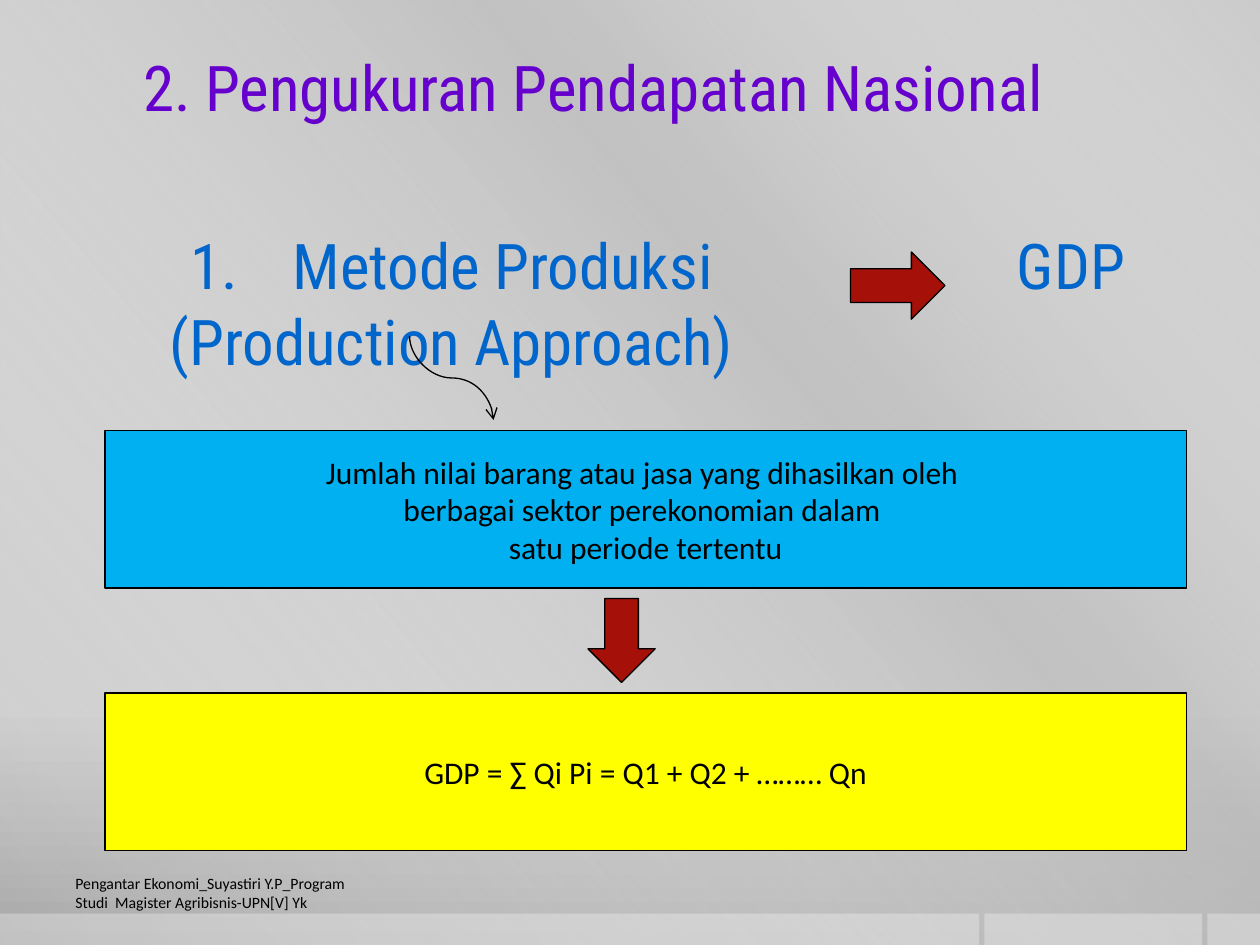
from lxml import etree
from pptx import Presentation
from pptx import util as u
from pptx.dml.color import RGBColor
from pptx.enum import shapes, text
from pptx.oxml import ns

COLORS = {
    "black": "000000", "white": "FFFFFF", "purple": "6600CC", "blue": "0066CC",
    "sky": "00B0F0", "yellow": "FFFF00", "red": "A51009",
    "pale": "CBCBCB", "light": "C8C8C8", "grey": "A7A7A7", "silver": "BFBFBF",
}
HEADING, BODY = "Roboto Condensed", "Calibri"


def add_xml(parent, tag, **attributes):
    return etree.SubElement(parent, ns.qn(tag), attributes)


class SlideBuilder:
    """Holds the style and the current slide, and adds each kind of element."""

    def __init__(self, presentation, layout_index):
        self.slide = presentation.slides.add_slide(presentation.slide_layouts[layout_index])

    def color(self, name):
        return RGBColor.from_string(COLORS[name])

    def place(self, shape, box):
        shape.left, shape.top, shape.width, shape.height = map(u.Pt, box)

    def gradient(self, fill, parent, stops, angle):
        fill.gradient()
        gradient = parent.find(".//" + ns.qn("a:gradFill"))
        for child in list(gradient):
            gradient.remove(child)
        stop_list = add_xml(gradient, "a:gsLst")
        for position, name, opacity in stops:
            stop = add_xml(stop_list, "a:gs", pos=str(position * 1000))
            self.opacity(add_xml(stop, "a:srgbClr", val=COLORS[name]), opacity)
        add_xml(gradient, "a:lin", ang=str(angle * 60000), scaled="0")

    def opacity(self, color_element, percent):
        if percent < 100:
            add_xml(color_element, "a:alpha", val=str(percent * 1000))

    def background(self, stops, angle):
        self.gradient(self.slide.background.fill, self.slide.element, stops, angle)

    def overlay(self, box, stops, angle):
        shape = self.shape("RECTANGLE", box)
        self.gradient(shape.fill, shape.element.spPr, stops, angle)

    def shape(self, kind, box, fill=None, line=None, opacity=100):
        shape = self.slide.shapes.add_shape(shapes.MSO_SHAPE[kind], *map(u.Pt, box))
        shape.shadow.inherit = False
        if fill:
            shape.fill.solid()
            shape.fill.fore_color.rgb = self.color(fill)
            self.opacity(shape.element.spPr.find(".//" + ns.qn("a:srgbClr")), opacity)
        if line:
            shape.line.color.rgb = self.color(line)
            shape.line.width = u.Pt(0.75)
        else:
            shape.line.fill.background()
        return shape

    def add_lines(self, shape, lines, size, font, color, anchor="TOP", align="CENTER",
                  wrap=False, numbered_indent=None):
        frame = shape.text_frame
        frame.word_wrap = wrap
        frame.auto_size = text.MSO_AUTO_SIZE.NONE
        frame.vertical_anchor = text.MSO_ANCHOR[anchor]
        for index, line in enumerate(lines):
            paragraph = frame.add_paragraph() if index else frame.paragraphs[0]
            paragraph.alignment = text.PP_ALIGN[align]
            paragraph.space_before = u.Pt(0)
            if numbered_indent:
                self.number(paragraph, numbered_indent, font, index == 0)
            run = paragraph.add_run()
            run.text = line
            run.font.size = u.Pt(size)
            run.font.name = font
            run.font.color.rgb = self.color(color)

    def number(self, paragraph, indent, font, visible):
        properties = paragraph._p.get_or_add_pPr()
        properties.set("marL", str(u.Pt(indent)))
        properties.set("indent", str(-u.Pt(indent)))
        if visible:
            add_xml(properties, "a:buFont", typeface=font)
            add_xml(properties, "a:buAutoNum", type="arabicPeriod")
        else:
            add_xml(properties, "a:buNone")

    def placeholder(self, index, box, lines, color, **options):
        shape = self.slide.placeholders[index]
        self.slide.shapes._spTree.append(shape.element)
        self.place(shape, box)
        self.add_lines(shape, lines, 36, HEADING, color, **options)

    def text_box(self, box, lines, size, font, color, **options):
        shape = self.slide.shapes.add_textbox(*map(u.Pt, box))
        self.add_lines(shape, lines, size, font, color, **options)

    def panel(self, box, lines, fill):
        shape = self.shape("RECTANGLE", box, fill, "black")
        self.add_lines(shape, lines, 18, BODY, "black", anchor="MIDDLE")

    def curved_arrow(self, start, end):
        connector = self.slide.shapes.add_connector(
            shapes.MSO_CONNECTOR.CURVE, *map(u.Pt, start + end))
        connector.line.color.rgb = self.color("black")
        connector.line.width = u.Pt(0.75)
        properties = connector._element.spPr
        transform = properties.find(ns.qn("a:xfrm"))
        transform.set("rot", str(270 * 60000))
        transform.set("flipH", "1")
        add_xml(properties.find(ns.qn("a:ln")), "a:tailEnd", type="arrow")
        add_xml(properties, "a:effectLst")


def main():
    presentation = Presentation()
    presentation.slide_width, presentation.slide_height = u.Pt(720), u.Pt(540)
    builder = SlideBuilder(presentation, 1)

    builder.background([(0, "pale", 100), (76, "light", 100), (100, "grey", 100)], 90)
    builder.overlay((0, 0, 720, 540), [(0, "white", 0), (34, "silver", 61),
                                       (38, "silver", 76), (100, "white", 0)], 140)
    for left, width in ((690, 30), (562.5, 124.5), (0, 559.5)):
        builder.shape("RECTANGLE", (left, 522, width, 18), "white", opacity=30)

    builder.text_box(
        (36, 492, 168, 36),
        ["Pengantar Ekonomi_Suyastiri Y.P_Program Studi  Magister Agribisnis-UPN[V] Yk"],
        9, BODY, "black", anchor="MIDDLE", align="LEFT", wrap=True)
    builder.placeholder(0, (48, 24, 582, 90), ["2. Pengukuran Pendapatan Nasional"], "purple")
    builder.placeholder(1, (30, 126, 456, 72), ["Metode Produksi", "(Production Approach)"],
                        "blue", numbered_indent=58.5)

    builder.panel((60, 246, 618, 90),
                  ["Jumlah nilai barang atau jasa yang dihasilkan oleh ",
                   "berbagai sektor perekonomian dalam ",
                   "satu periode tertentu"], "sky")
    builder.curved_arrow((234, 192), (282, 240))
    builder.panel((60, 396, 618, 90), ["GDP = ∑ Qi Pi = Q1 + Q2 + ……… Qn"], "yellow")
    builder.shape("DOWN_ARROW", (336, 342, 38.4, 48), "red", "black")
    builder.shape("RIGHT_ARROW", (486, 144, 54, 38.4), "red", "black")
    builder.text_box((552, 126, 120, 72), ["GDP"], 36, HEADING, "blue")

    presentation.save("out.pptx")


if __name__ == "__main__":
    main()
